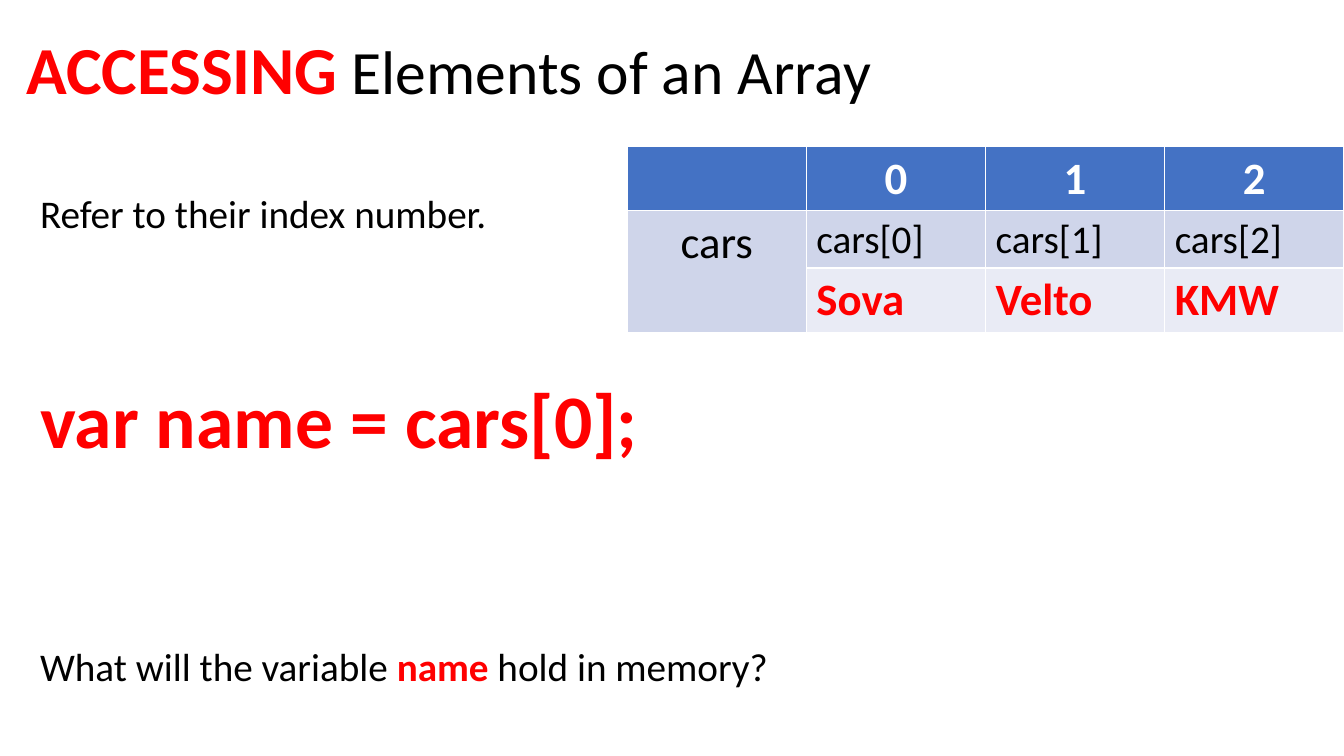
from pptx import Presentation
from pptx.dml.color import RGBColor
from pptx.enum.text import MSO_ANCHOR, MSO_AUTO_SIZE, PP_ALIGN
from pptx.util import Pt

# Content: a run is (text, format)
BLACK, RED, WHITE = "000000", "FF0000", "FFFFFF"
PLAIN = {"size": 28, "color": BLACK, "bold": False}
KEYWORD = {"size": 28, "color": RED, "bold": True}
CODE = {"size": 54, "color": RED, "bold": True}
HEADER = {"size": 32, "color": WHITE, "bold": True}
ARRAY_NAME = {"size": 32, "color": BLACK, "bold": False}
VALUE = {"size": 32, "color": RED, "bold": True}

TITLE = [
    ("ACCESSING", {"size": 48, "color": RED, "bold": True}),
    (" Elements of an Array", {"size": 44, "color": BLACK, "bold": False}),
]
# Space before each paragraph, then its runs
BODY = [
    (10, [("Refer to their index number.", PLAIN)]),
    (110, [("var name = cars[0];", CODE)]),
    (135, [("What will the variable ", PLAIN), ("name", KEYWORD),
           (" hold in memory?", PLAIN)]),
]
# Row height, fill, format, alignment, cell texts
TABLE_ROWS = [
    (46, "4472C4", HEADER, PP_ALIGN.CENTER, ["", "0", "1", "2"]),
    (41, "CFD5EA", PLAIN, PP_ALIGN.LEFT, ["cars", "cars[0]", "cars[1]", "cars[2]"]),
    (46, "E9EBF5", VALUE, PP_ALIGN.LEFT, ["", "Sova", "Velto", "KMW"]),
]
TABLE_LEFT, TABLE_TOP, COLUMN_WIDTH = 448, 104.5, 128


def color(value):
    return RGBColor.from_string(value)


def add_runs(paragraph, runs):
    for text, formats in runs:
        run = paragraph.add_run()
        run.text = text
        values = {"name": "Calibri", "size": Pt(formats["size"]),
                  "bold": formats["bold"]}
        for name, value in values.items():
            setattr(run.font, name, value)
        run.font.color.rgb = color(formats["color"])


def place(shape, left, top, width, height):
    box = {"left": left, "top": top, "width": width, "height": height}
    for name, value in box.items():
        setattr(shape, name, Pt(value))


presentation = Presentation()
presentation.slide_width, presentation.slide_height = Pt(960), Pt(540)
slide = presentation.slides.add_slide(presentation.slide_layouts[5])

# Title
title = slide.shapes.title
place(title, 11.5, 0, 828, 104.4)
title.text_frame.auto_size = MSO_AUTO_SIZE.NONE
title.text_frame.vertical_anchor = MSO_ANCHOR.MIDDLE
title_paragraph = title.text_frame.paragraphs[0]
title_paragraph.alignment = PP_ALIGN.LEFT
title_paragraph.line_spacing = 0.9
add_runs(title_paragraph, TITLE)

# Body text
body = slide.shapes.add_textbox(Pt(21.6), Pt(138.2), Pt(582), Pt(381))
body.text_frame.word_wrap = True
for index, (space, runs) in enumerate(BODY):
    paragraphs = body.text_frame.paragraphs
    paragraph = body.text_frame.add_paragraph() if index else paragraphs[0]
    paragraph.space_before = Pt(space)
    paragraph.line_spacing = 0.8
    add_runs(paragraph, runs)

# Array table
column_count = len(TABLE_ROWS[0][-1])
table = slide.shapes.add_table(
    len(TABLE_ROWS), column_count, Pt(TABLE_LEFT), Pt(TABLE_TOP),
    Pt(COLUMN_WIDTH * column_count), Pt(sum(row[0] for row in TABLE_ROWS))).table
for column in table.columns:
    column.width = Pt(COLUMN_WIDTH)
for row_index, (height, fill, formats, alignment, texts) in enumerate(TABLE_ROWS):
    table.rows[row_index].height = Pt(height)
    for column_index, text in enumerate(texts):
        cell = table.cell(row_index, column_index)
        cell.fill.solid()
        cell.fill.fore_color.rgb = color(fill)
        if text:
            is_name = row_index > 0 and column_index == 0
            paragraph = cell.text_frame.paragraphs[0]
            paragraph.alignment = PP_ALIGN.CENTER if is_name else alignment
            add_runs(paragraph, [(text, ARRAY_NAME if is_name else formats)])
table.cell(1, 0).merge(table.cell(2, 0))

presentation.save("out.pptx")
